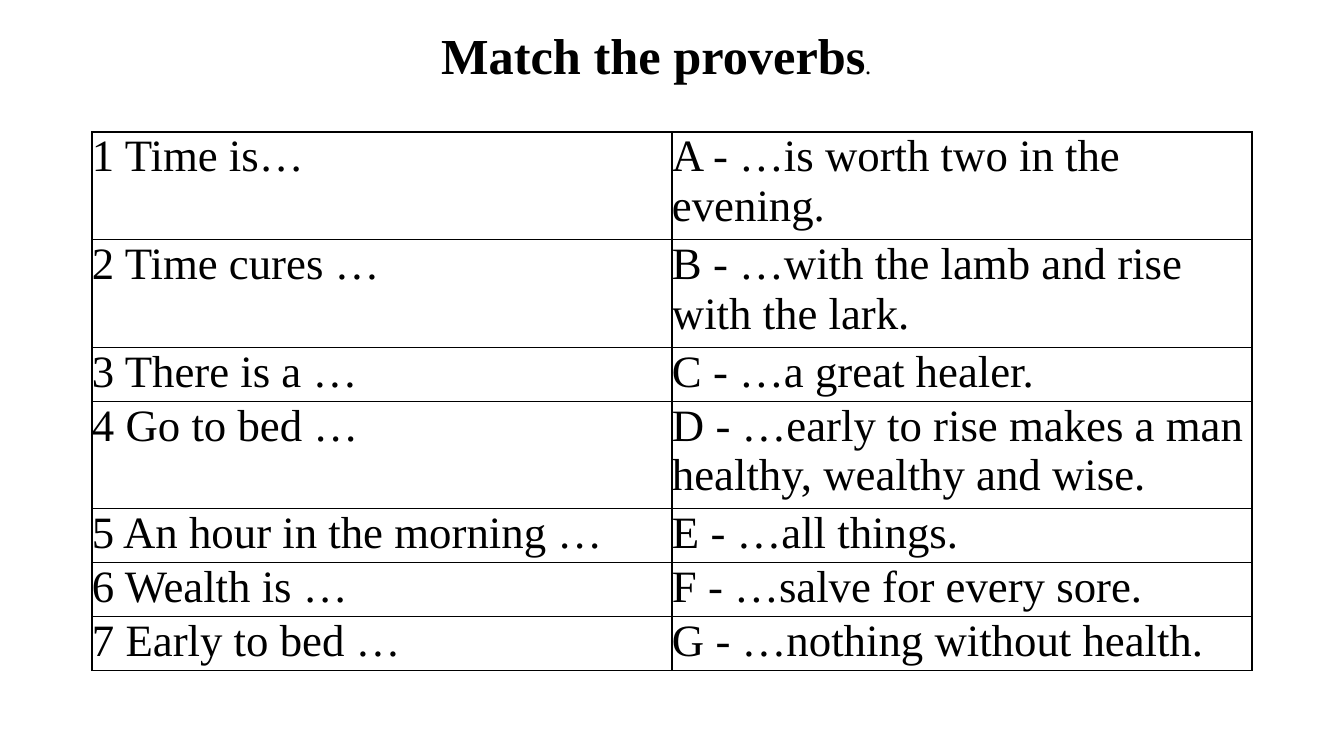
from lxml import etree
from pptx import Presentation
from pptx import util as u
from pptx.dml.color import RGBColor
from pptx.enum import text
from pptx.oxml import ns

PX = 12192000 / 1344
COLORS = {"ink": "000000", "paper": "FFFFFF"}
FONT = "Times New Roman"
SINGLE, DOUBLE = 54, 107
PROVERBS = [
    ("1 Time is…", "A - …is worth two in the evening.", DOUBLE),
    ("2 Time cures …", "B - …with the lamb and rise with the lark.", DOUBLE),
    ("3 There is a …", "C - …a great healer.", SINGLE),
    ("4 Go to bed …", "D - …early to rise makes a man healthy, wealthy and wise.", DOUBLE),
    ("5 An hour in the morning …", "E - …all things.", SINGLE),
    ("6 Wealth is …", "F - …salve for every sore.", SINGLE),
    ("7 Early to bed …", "G - …nothing without health.", SINGLE),
]


def px(length):
    return u.Emu(round(length * PX))


def add_span(para, words, size, bold=False, italic=False):
    span = para.add_run()
    span.text = words
    look = {"name": FONT, "size": u.Pt(size), "bold": bold, "italic": italic}
    for name, value in look.items():
        setattr(span.font, name, value)
    span.font.color.rgb = RGBColor.from_string(COLORS["ink"])


deck = Presentation()
deck.slide_width, deck.slide_height = px(1344), px(756)
page = deck.slides.add_slide(deck.slide_layouts[5])

title = page.shapes.title
place = {"left": 431, "top": 15, "width": 672, "height": 72}
for name, value in place.items():
    setattr(title, name, px(value))
frame = title.text_frame
frame.word_wrap = True
frame.auto_size = text.MSO_AUTO_SIZE.SHAPE_TO_FIT_TEXT
frame.vertical_anchor = text.MSO_ANCHOR.TOP
para = frame.paragraphs[0]
layout = {"alignment": text.PP_ALIGN.LEFT, "line_spacing": 1.07, "space_after": u.Pt(8)}
for name, value in layout.items():
    setattr(para, name, value)
add_span(para, "Match the proverbs", 36, bold=True)
add_span(para, ".", 18, italic=True)

height = sum(row[2] for row in PROVERBS)
table = page.shapes.add_table(len(PROVERBS), 2, px(92), px(132), px(1160), px(height)).table
table.first_row = table.horz_banding = False
for row, (start, ending, row_height) in zip(table.rows, PROVERBS):
    row.height = px(row_height)
    for cell, words in zip(row.cells, (start, ending)):
        for side in ("left", "top", "right", "bottom"):
            setattr(cell, f"margin_{side}", 0)
        add_span(cell.text_frame.paragraphs[0], words, 32)
        properties = cell._tc.get_or_add_tcPr()
        for edge in ("a:lnL", "a:lnR", "a:lnT", "a:lnB"):
            line = etree.SubElement(properties, ns.qn(edge), w=str(u.Pt(1)))
            fill = etree.SubElement(line, ns.qn("a:solidFill"))
            etree.SubElement(fill, ns.qn("a:srgbClr"), val=COLORS["ink"])
        cell.fill.solid()
        cell.fill.fore_color.rgb = RGBColor.from_string(COLORS["paper"])

deck.save("out.pptx")
